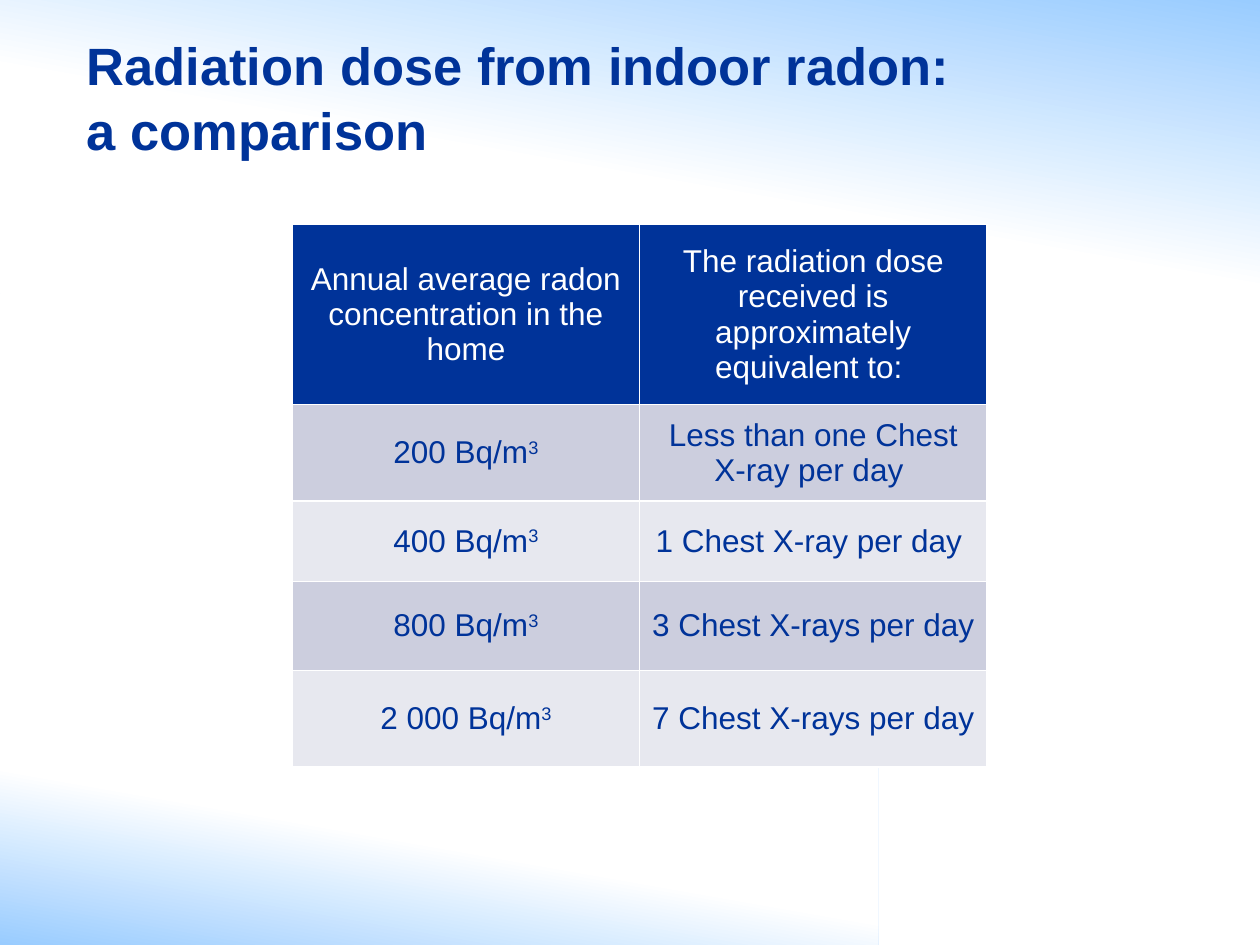
import pptx
import pptx.dml.color
import pptx.enum.shapes
import pptx.enum.text
import pptx.oxml
import pptx.oxml.ns
import pptx.util

Pt = pptx.util.Pt
RGBColor = pptx.dml.color.RGBColor
MIDDLE = pptx.enum.text.MSO_ANCHOR.MIDDLE
CENTER = pptx.enum.text.PP_ALIGN.CENTER

NAVY = RGBColor(0x00, 0x33, 0x99)
SKY = RGBColor(0x99, 0xCC, 0xFF)
WHITE = RGBColor(0xFF, 0xFF, 0xFF)
BANDS = RGBColor(0xCC, 0xCE, 0xDE), RGBColor(0xE7, 0xE8, 0xEF)

TITLE = "Radiation dose from indoor radon: a comparison"
HEADER = ("Annual average radon concentration in the home",
          "The radiation dose received is approximately equivalent to: ")
DOSES = [
    ("200 Bq/m", "Less than one Chest X-ray per day "),
    ("400 Bq/m", "1 Chest X-ray per day "),
    ("800 Bq/m", "3 Chest X-rays per day"),
    ("2 000 Bq/m", "7 Chest X-rays per day"),
]
EXPONENT = "3"
ROW_HEIGHTS = [103, 55, 46, 51, 55]
COL_WIDTH = 198.5

# left, top, width, height, gradient angle (counter-clockwise), end of fade
GLOWS = [
    (0, 417.6, 501.8, 122.4, 80, 0.48),
    (0, 0, 720, 167.8, 260, 0.56),
]


def add_glow(slide, left, top, width, height, angle, fade_end):
    """Add a rectangle fading from sky blue to white."""
    sp = slide.shapes.add_shape(pptx.enum.shapes.MSO_SHAPE.RECTANGLE,
                                Pt(left), Pt(top), Pt(width), Pt(height))
    sp.shadow.inherit = False
    sp.line.fill.background()
    sp.fill.gradient()
    sp.fill.gradient_angle = angle
    stops = zip(sp.fill.gradient_stops, (SKY, WHITE), (0, fade_end))
    for stop, color, position in stops:
        stop.color.rgb = color
        stop.position = position


def set_font(p, size, color, bold=False):
    p.font.name = "Arial"
    p.font.size = Pt(size)
    p.font.bold = bold
    p.font.color.rgb = color


def set_borders(cell):
    """Put a 1 pt white line on all four sides of the cell."""
    tcPr = cell._tc.get_or_add_tcPr()
    for i, side in enumerate(("lnL", "lnR", "lnT", "lnB")):
        tcPr.insert(i, pptx.oxml.parse_xml(
            f'<a:{side} {pptx.oxml.ns.nsdecls("a")} w="{Pt(1)}"><a:solidFill>'
            f'<a:srgbClr val="{WHITE}"/></a:solidFill></a:{side}>'))


def fill_cell(cell, text, fill, color, exponent=""):
    cell.fill.solid()
    cell.fill.fore_color.rgb = fill
    cell.vertical_anchor = MIDDLE
    set_borders(cell)
    p = cell.text_frame.paragraphs[0]
    p.alignment = CENTER
    set_font(p, 18, color)
    p.add_run().text = text
    if exponent:
        r = p.add_run()
        r.text = exponent
        r.font._element.set("baseline", "30000")


def add_dose_table(slide):
    frame = slide.shapes.add_table(len(ROW_HEIGHTS), 2, Pt(167), Pt(128.2),
                                   Pt(2 * COL_WIDTH), Pt(sum(ROW_HEIGHTS)))
    table = frame.table
    for column in table.columns:
        column.width = Pt(COL_WIDTH)
    for row, height in zip(table.rows, ROW_HEIGHTS):
        row.height = Pt(height)
    for col, text in enumerate(HEADER):
        fill_cell(table.cell(0, col), text, NAVY, WHITE)
    for i, (concentration, dose) in enumerate(DOSES):
        band = BANDS[i % 2]
        fill_cell(table.cell(i + 1, 0), concentration, band, NAVY, EXPONENT)
        fill_cell(table.cell(i + 1, 1), dose, band, NAVY)


def add_title(slide):
    tf = slide.shapes.add_textbox(Pt(42.5), Pt(21), Pt(521.3), Pt(67.7)).text_frame
    tf.word_wrap = True
    tf.vertical_anchor = MIDDLE
    p = tf.paragraphs[0]
    p.text = TITLE
    p.line_spacing = 1.04
    set_font(p, 30, NAVY, bold=True)


def main():
    prs = pptx.Presentation()
    prs.slide_width, prs.slide_height = Pt(720), Pt(540)
    slide = prs.slides.add_slide(prs.slide_layouts[6])
    for glow in GLOWS:
        add_glow(slide, *glow)
    add_title(slide)
    add_dose_table(slide)
    prs.save("out.pptx")


if __name__ == "__main__":
    main()
